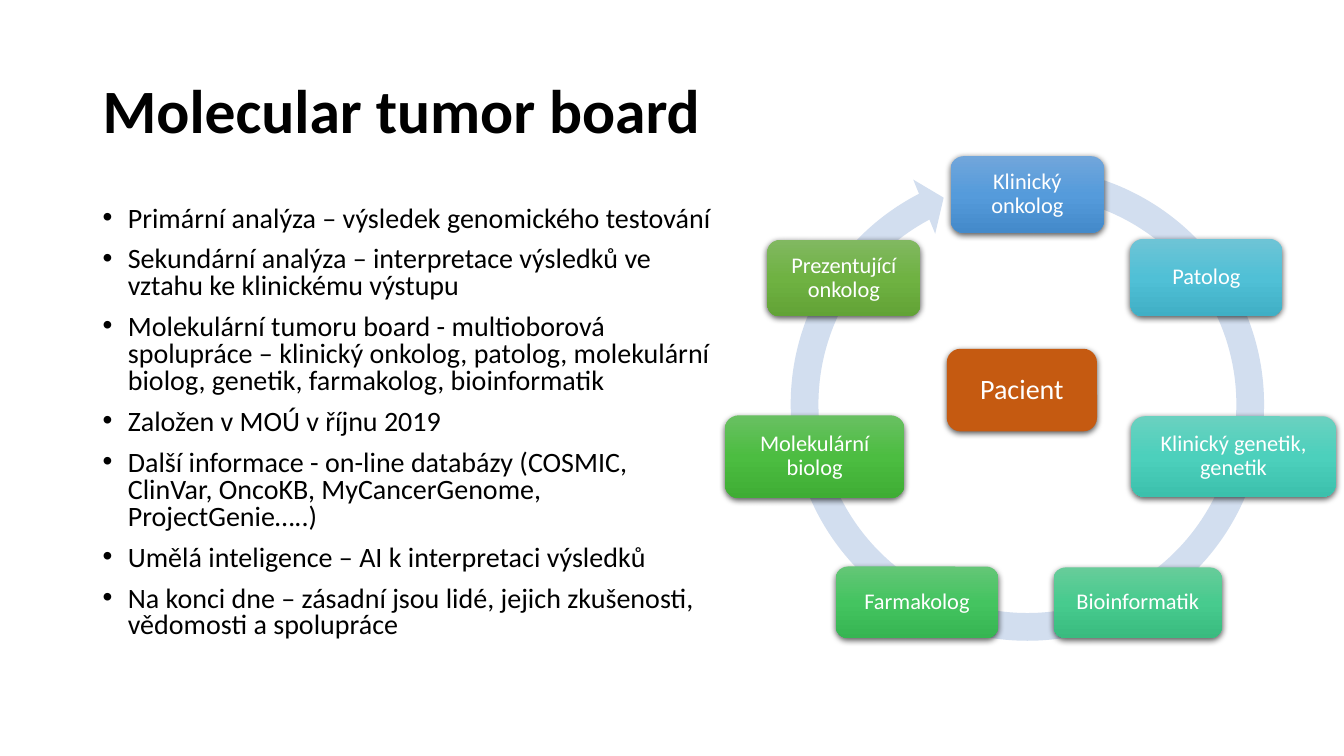
from dataclasses import dataclass

from lxml import etree
from pptx import Presentation
from pptx import util as u
from pptx.dml.color import RGBColor
from pptx.enum import shapes, text
from pptx.oxml.ns import qn

EMU_PER_PX = 9144  # 100 px to the inch
FONT = "Calibri"
COLORS = {
    "ink": "000000",
    "label": "FFFFFF",
    "cycle": "D2DEEF",
    "patient": "C55A11",
    "shadow": "000000",
}


@dataclass(frozen=True)
class Box:
    left: int
    top: int
    width: int
    height: int

    def emu(self) -> list[int]:
        return [v * EMU_PER_PX for v in (self.left, self.top, self.width, self.height)]


@dataclass(frozen=True)
class Role:
    label: str
    box: Box
    colors: tuple[str, ...]  # one colour: solid; more: gradient from top to bottom
    size: int = 16


TITLE_BOX = Box(92, 40, 1150, 145)
POINTS_BOX = Box(92, 200, 626, 476)
CYCLE_BOX = Box(769, 151, 500, 500)
CYCLE_ADJUSTMENTS = (0.055, 3.307, 145.453, 169.334, 0.058)

POINTS = [
    "Primární analýza – výsledek genomického testování",
    "Sekundární analýza – interpretace výsledků ve vztahu ke klinickému výstupu",
    "Molekulární tumoru board - multioborová spolupráce – klinický onkolog, patolog, "
    "molekulární biolog, genetik, farmakolog, bioinformatik",
    "Založen v MOÚ v říjnu 2019",
    "Další informace - on-line databázy (COSMIC, ClinVar, OncoKB, MyCancerGenome, "
    "ProjectGenie…..)",
    "Umělá inteligence – AI k interpretaci výsledků",
    "Na konci dne – zásadní jsou lidé, jejich zkušenosti, vědomosti a spolupráce",
]

ROLES = [
    Role("Klinický onkolog", Box(943, 155, 152, 76), ("71A6DB", "559BDB", "448ACA")),
    Role("Patolog", Box(1121, 237, 151, 77), ("6EC4D6", "50C0D6", "40AFC5")),
    Role("Klinický genetik, genetik", Box(1122, 413, 203, 80), ("6AD1C0", "4CD0BC", "3CC0AC")),
    Role("Bioinformatik", Box(1045, 563, 167, 70), ("67CC9A", "47CB8E", "39BB7F")),
    Role("Farmakolog", Box(829, 562, 161, 71), ("64C677", "44C460", "36B552")),
    Role("Molekulární biolog", Box(719, 412, 178, 82), ("69C062", "4CBD41", "3FAD34")),
    Role("Prezentující onkolog", Box(761, 238, 152, 76), ("81B861", "6FB242", "62A336")),
    Role("Pacient", Box(939, 346, 149, 82), (COLORS["patient"],), size=20),
]


def add_xml(parent, tag: str, **attributes):
    return etree.SubElement(parent, qn(tag), {k: str(v) for k, v in attributes.items()})


def write(frame, lines: list[str], *, size: int, color: str, bold: bool = False,
          align=text.PP_ALIGN.LEFT, anchor=text.MSO_ANCHOR.TOP, spacing: float = 0.9,
          before: int = 0, inset: tuple[int, int] = (10, 5), bullet_indent: int = 0) -> None:
    """Fill a text frame with one paragraph per line; inset is horizontal, vertical px."""
    frame.word_wrap = True
    frame.vertical_anchor = anchor
    frame.margin_left = frame.margin_right = inset[0] * EMU_PER_PX
    frame.margin_top = frame.margin_bottom = inset[1] * EMU_PER_PX
    for index, line in enumerate(lines):
        paragraph = frame.add_paragraph() if index else frame.paragraphs[0]
        paragraph.alignment = align
        paragraph.line_spacing = spacing
        paragraph.space_before = u.Pt(before if index else 0)
        if bullet_indent:
            properties = paragraph._p.get_or_add_pPr()
            properties.set("marL", str(bullet_indent * EMU_PER_PX))
            properties.set("indent", str(-bullet_indent * EMU_PER_PX))
            add_xml(properties, "a:buFont", typeface="Arial")
            add_xml(properties, "a:buChar", char="•")
        run = paragraph.add_run()
        run.text = line
        run.font.name = FONT
        run.font.size = u.Pt(size)
        run.font.bold = bold
        run.font.color.rgb = RGBColor.from_string(color)


def paint(shape, colors: tuple[str, ...]) -> None:
    """Fill without outline: solid for one colour, else evenly spaced downwards."""
    shape.shadow.inherit = False
    shape.line.fill.background()
    if len(colors) == 1:
        shape.fill.solid()
        shape.fill.fore_color.rgb = RGBColor.from_string(colors[0])
        return
    shape.fill.gradient()
    shape.fill.gradient_angle = 270
    stops = shape._element.spPr.find(".//" + qn("a:gsLst"))
    for stop in list(stops):
        stops.remove(stop)
    for index, color in enumerate(colors):
        stop = add_xml(stops, "a:gs", pos=100000 * index // (len(colors) - 1))
        add_xml(stop, "a:srgbClr", val=color)


def add_drop_shadow(shape) -> None:
    effects = shape._element.spPr.find(qn("a:effectLst"))
    shadow = add_xml(effects, "a:outerShdw", blurRad=u.Pt(4.5), dist=u.Pt(1.5),
                     dir=5400000, algn="ctr", rotWithShape=0)
    add_xml(add_xml(shadow, "a:srgbClr", val=COLORS["shadow"]), "a:alpha", val=63000)


def add_cycle_arrow(slide) -> None:
    cycle = slide.shapes.add_shape(shapes.MSO_SHAPE.CIRCULAR_ARROW, *CYCLE_BOX.emu())
    for index, value in enumerate(CYCLE_ADJUSTMENTS):
        cycle.adjustments[index] = value
    paint(cycle, (COLORS["cycle"],))


def add_role(slide, role: Role) -> None:
    card = slide.shapes.add_shape(shapes.MSO_SHAPE.ROUNDED_RECTANGLE, *role.box.emu())
    paint(card, role.colors)
    add_drop_shadow(card)
    write(card.text_frame, [role.label], size=role.size, color=COLORS["label"],
          align=text.PP_ALIGN.CENTER, anchor=text.MSO_ANCHOR.MIDDLE, inset=(7, 7))


def main() -> None:
    deck = Presentation()
    deck.slide_width, deck.slide_height = u.Inches(13.33), u.Inches(7.5)
    slide = deck.slides.add_slide(deck.slide_layouts[6])

    title = slide.shapes.add_textbox(*TITLE_BOX.emu())
    write(title.text_frame, ["Molecular tumor board"], size=44, color=COLORS["ink"],
          bold=True, anchor=text.MSO_ANCHOR.MIDDLE)
    points = slide.shapes.add_textbox(*POINTS_BOX.emu())
    write(points.text_frame, POINTS, size=20, color=COLORS["ink"], spacing=0.8,
          before=10, bullet_indent=25)

    add_cycle_arrow(slide)
    for role in ROLES:
        add_role(slide, role)
    deck.save("out.pptx")


if __name__ == "__main__":
    main()
